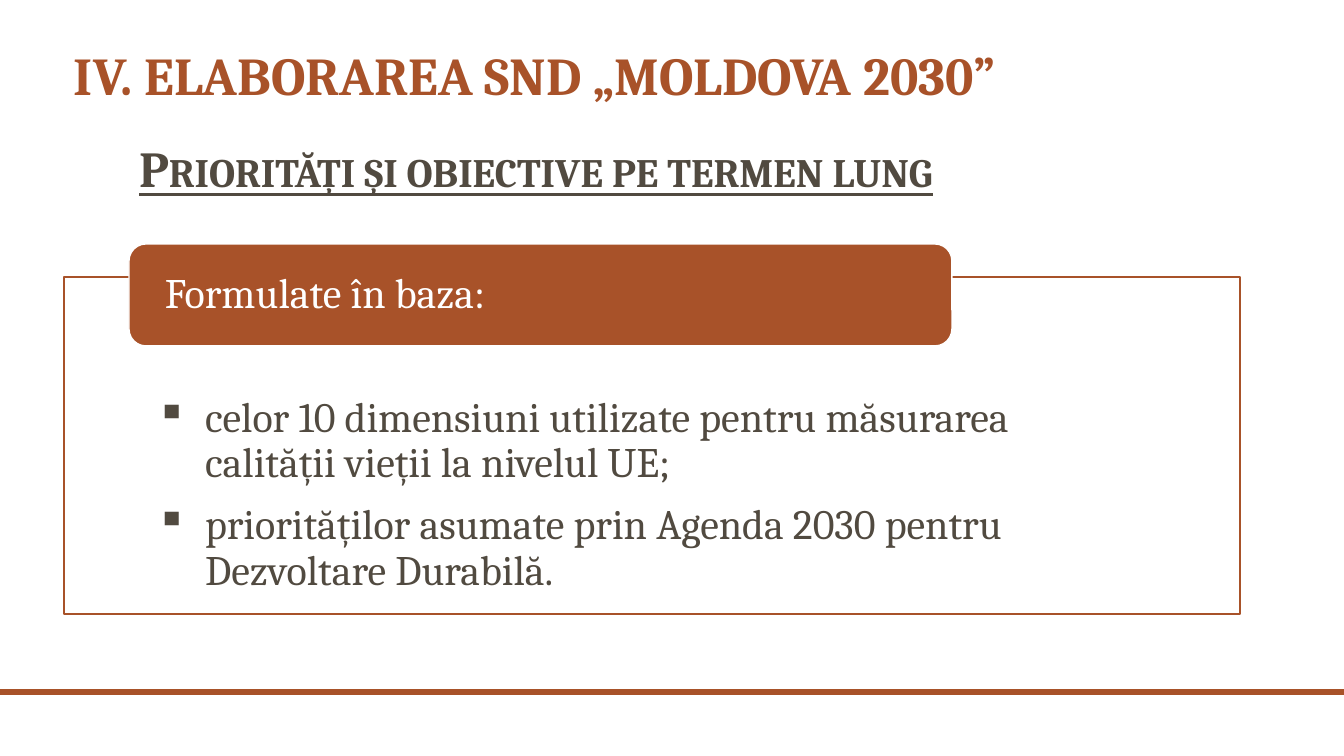
from lxml import etree
from pptx import Presentation
from pptx import util as u
from pptx.dml.color import RGBColor
from pptx.enum import shapes, text
from pptx.oxml.ns import qn

PX = 914400 / 100.8
COLORS = {"rust": "A85229", "ink": "514A40", "white": "FFFFFF"}
TITLE = {"size": u.Pt(38), "bold": True}
SUBTITLE = {"size": u.Pt(36), "bold": True, "underline": True}
BODY = {"size": u.Pt(30)}


def px(n):
    """Turn a length in px into EMU."""
    return u.Emu(round(n * PX))


def rgb(name):
    """Look up a named colour."""
    return RGBColor.from_string(COLORS[name])


def set_frame(sp, margins, anchor=text.MSO_ANCHOR.TOP):
    """Set wrapping, anchor and left, top, right, bottom margins."""
    tf = sp.text_frame
    frame = {"word_wrap": True, "vertical_anchor": anchor}
    sides = ("left", "top", "right", "bottom")
    frame.update({f"margin_{side}": px(m) for side, m in zip(sides, margins)})
    for name, value in frame.items():
        setattr(tf, name, value)
    return tf


def write(p, words, font, color, spacing=0.9, after=0):
    """Write one formatted run in a paragraph."""
    layout = {"alignment": text.PP_ALIGN.LEFT, "line_spacing": spacing,
              "space_after": u.Pt(after)}
    for name, value in layout.items():
        setattr(p, name, value)
    r = p.add_run()
    r.text = words
    for name, value in {"name": "Cambria", **font}.items():
        setattr(r.font, name, value)
    r.font.color.rgb = rgb(color)
    return r


def add_heading(s, box, words, font, color, anchor, spacing):
    """Add a one-line heading and return its run."""
    sp = s.shapes.add_textbox(*map(px, box))
    tf = set_frame(sp, (10, 5, 10, 5), anchor)
    return write(tf.paragraphs[0], words, font, color, spacing)


def add_block(s, kind, box, fill, line=None):
    """Add a filled shape with an optional outline."""
    sp = s.shapes.add_shape(kind, *map(px, box))
    sp.shadow.inherit = False
    sp.fill.solid()
    sp.fill.fore_color.rgb = rgb(fill)
    if line:
        sp.line.color.rgb = rgb(line)
        sp.line.width = u.Pt(1)
    else:
        sp.line.fill.background()
    return sp


def add_bullets(tf, items):
    """Write the items as square-bulleted paragraphs."""
    for i, words in enumerate(items):
        p = tf.add_paragraph() if i else tf.paragraphs[0]
        p.level = 1
        pPr = p._p.get_or_add_pPr()
        pPr.set("marL", str(px(49)))
        pPr.set("indent", str(-px(49)))
        etree.SubElement(pPr, qn("a:buChar")).set("char", "▪")
        write(p, words, BODY, "ink", after=12)


def main():
    """Build the slide and save it."""
    prs = Presentation()
    prs.slide_width, prs.slide_height = px(1344), px(756)
    s = prs.slides.add_slide(prs.slide_layouts[6])
    rect = shapes.MSO_SHAPE.RECTANGLE

    add_block(s, rect, (0, 689, 1344, 6), "rust")
    add_heading(s, (64, 19, 1210, 93), "IV. ELABORAREA SND „MOLDOVA 2030”",
                TITLE, "rust", text.MSO_ANCHOR.BOTTOM, 0.9)
    r = add_heading(s, (129, 124, 1187, 70),
                    "Priorități și obiective pe termen lung",
                    SUBTITLE, "ink", text.MSO_ANCHOR.TOP, 1.14)
    r._r.get_or_add_rPr().set("cap", "small")

    panel = add_block(s, rect, (64, 277, 1176, 337), "white", "rust")
    add_bullets(set_frame(panel, (92, 119, 92, 23)), (
        "celor 10 dimensiuni utilizate pentru măsurarea calității vieții "
        "la nivelul UE;",
        "priorităților asumate prin Agenda 2030 pentru Dezvoltare Durabilă.",
    ))
    label = add_block(s, shapes.MSO_SHAPE.ROUNDED_RECTANGLE,
                      (129, 244, 823, 102), "rust", "white")
    tf = set_frame(label, (31, 0, 31, 0), text.MSO_ANCHOR.MIDDLE)
    write(tf.paragraphs[0], "Formulate în baza:", BODY, "white")
    prs.save("out.pptx")


if __name__ == "__main__":
    main()
